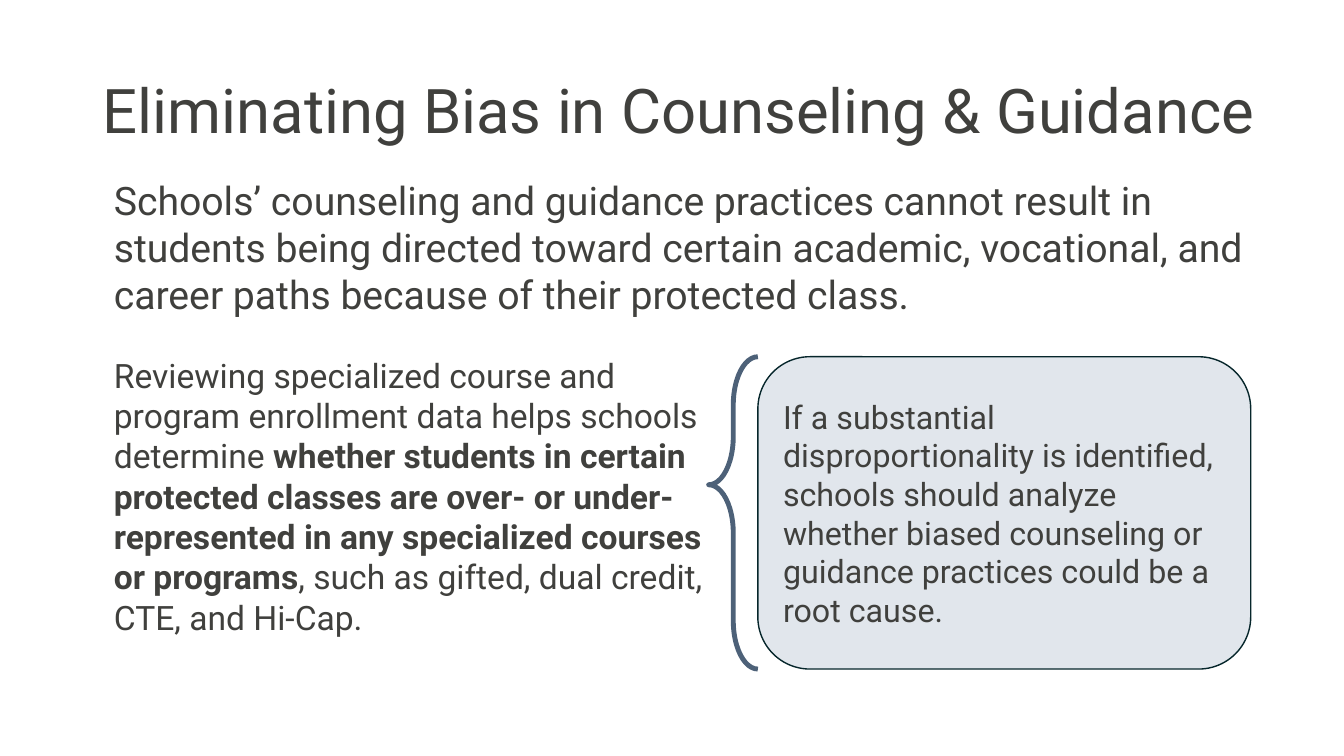
from pptx import Presentation
from pptx.dml.color import RGBColor
from pptx.enum.shapes import MSO_SHAPE as Shape
from pptx.enum.text import MSO_ANCHOR as Anchor, MSO_AUTO_SIZE as AutoSize, PP_ALIGN as Align
from pptx.util import Cm, Pt

TEXT = RGBColor(0x40, 0x40, 0x3D)
BRACE = RGBColor(0x4D, 0x61, 0x78)
PANEL = RGBColor(0xE1, 0xE6, 0xEC)
OUTLINE = RGBColor(0x06, 0x26, 0x2B)

# Each text is a list of (wording, bold) runs.
TITLE = [("Eliminating Bias in Counseling & Guidance", False)]
RULE = [("Schools’ counseling and guidance practices cannot result in students being "
         "directed toward certain academic, vocational, and career paths because of "
         "their protected class.", False)]
REVIEW = [
    ("Reviewing specialized course and program enrollment data helps schools determine ", False),
    ("whether students in certain protected classes are over- or under-represented "
     "in any specialized courses or programs", True),
    (", such as gifted, dual credit, CTE, and Hi-Cap.", False),
]
ACTION = [("If a substantial disproportionality is identified, schools should analyze whether "
           "biased counseling or guidance practices could be a root cause.", False)]

# Left, top, width, height in centimetres; the brace and panel share a row.
TITLE_BOX = (2.34, 1.02, 29.77, 3.68)
TEXT_LEFT = 2.62
RULE_BOX = (TEXT_LEFT, 4.32, 29.21, 3.94)
REVIEW_BOX = (TEXT_LEFT, 8.81, 15.62, 8.2)
ROW_TOP, ROW_HEIGHT = 8.99, 7.87
PANEL_LEFT, PANEL_WIDTH = 19.1, 12.42
BRACE_WIDTH = 1.24
BRACE_BOX = (PANEL_LEFT - BRACE_WIDTH, ROW_TOP, BRACE_WIDTH, ROW_HEIGHT)
PANEL_BOX = (PANEL_LEFT, ROW_TOP, PANEL_WIDTH, ROW_HEIGHT)


def lengths(box):
    return [Cm(value) for value in box]


def write(shape, runs, size, anchor=Anchor.TOP, spacing=1.0):
    frame = shape.text_frame
    frame_format = {"word_wrap": True, "auto_size": AutoSize.NONE, "vertical_anchor": anchor}
    for name, value in frame_format.items():
        setattr(frame, name, value)
    paragraph = frame.paragraphs[0]
    paragraph.alignment = Align.LEFT
    paragraph.line_spacing = spacing
    for wording, bold in runs:
        run = paragraph.add_run()
        run.text = wording
        for name, value in {"name": "Roboto", "size": Pt(size), "bold": bold}.items():
            setattr(run.font, name, value)
        run.font.color.rgb = TEXT


def add_outlined(slide, kind, box, color, width):
    shape = slide.shapes.add_shape(kind, *lengths(box))
    shape.shadow.inherit = False
    shape.line.color.rgb = color
    shape.line.width = Pt(width)
    return shape


def main():
    deck = Presentation()
    deck.slide_width, deck.slide_height = Cm(33.87), Cm(19.05)
    slide = deck.slides.add_slide(deck.slide_layouts[5])

    title = slide.shapes.title
    title.left, title.top, title.width, title.height = lengths(TITLE_BOX)
    write(title, TITLE, 44, Anchor.MIDDLE, 0.9)

    for box, runs, size in ((RULE_BOX, RULE, 28), (REVIEW_BOX, REVIEW, 24)):
        write(slide.shapes.add_textbox(*lengths(box)), runs, size)

    brace = add_outlined(slide, Shape.LEFT_BRACE, BRACE_BOX, BRACE, 3.5)
    brace.fill.background()
    brace.adjustments[0], brace.adjustments[1] = 0.98, 0.41

    panel = add_outlined(slide, Shape.ROUNDED_RECTANGLE, PANEL_BOX, OUTLINE, 1)
    panel.fill.solid()
    panel.fill.fore_color.rgb = PANEL
    write(panel, ACTION, 23, Anchor.MIDDLE)

    deck.save("out.pptx")


if __name__ == "__main__":
    main()
